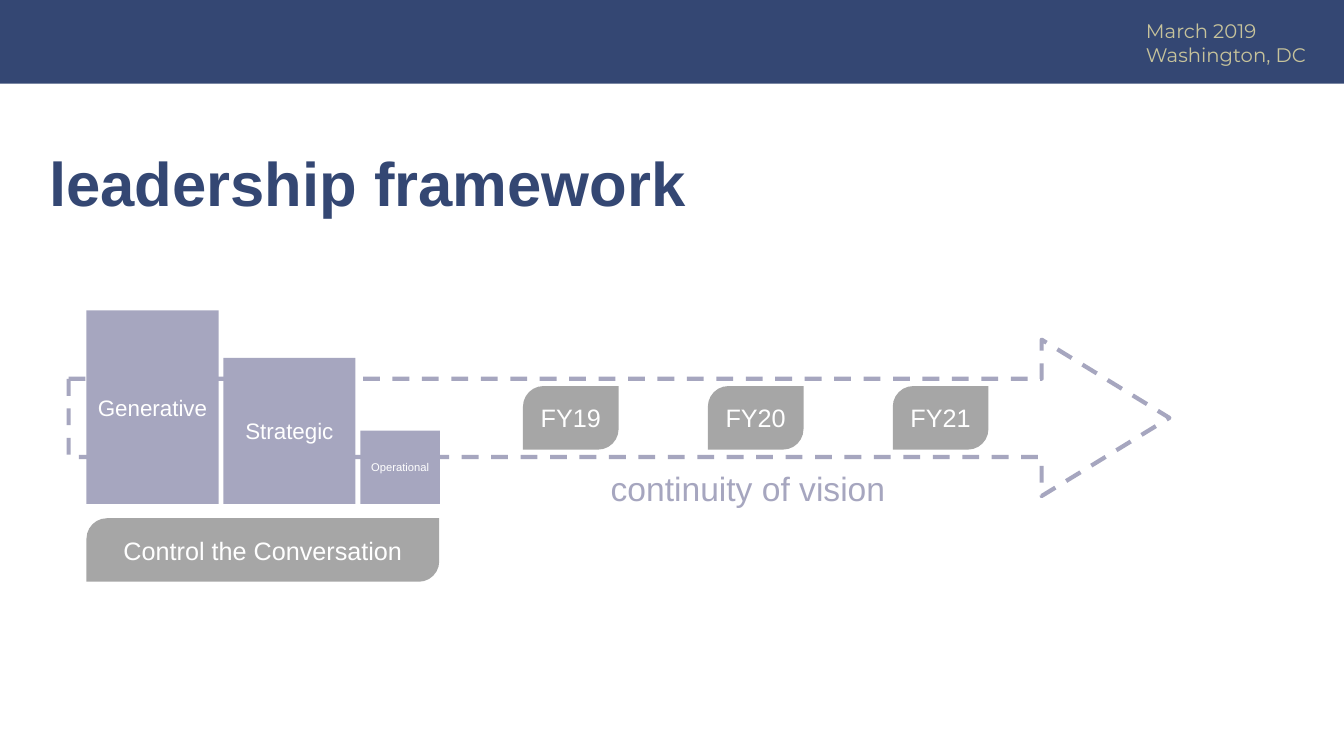
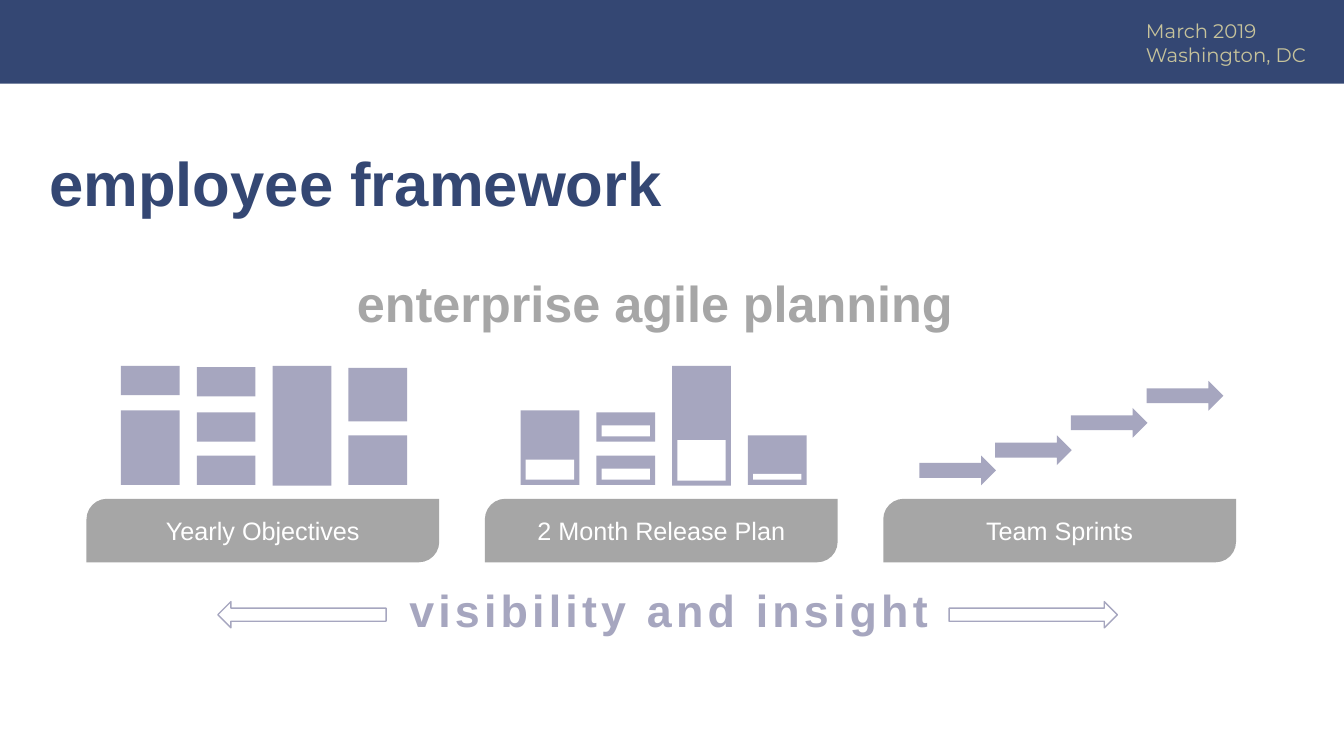
from dataclasses import dataclass

from pptx import Presentation
from pptx.dml.color import RGBColor
from pptx.enum.dml import MSO_LINE
from pptx.enum.shapes import MSO_SHAPE
from pptx.enum.text import MSO_ANCHOR, MSO_AUTO_SIZE, PP_ALIGN
from pptx.util import Cm, Pt

RECT = MSO_SHAPE.RECTANGLE
TAB = MSO_SHAPE.ROUND_2_DIAG_RECTANGLE
RIGHT, LEFT = MSO_SHAPE.RIGHT_ARROW, MSO_SHAPE.LEFT_ARROW
DASH = MSO_LINE.DASH
MIDDLE, TOP = MSO_ANCHOR.MIDDLE, MSO_ANCHOR.TOP
CENTER, START = PP_ALIGN.CENTER, PP_ALIGN.LEFT
FIXED = MSO_AUTO_SIZE.NONE

NAVY, SAND, GRAY, LILAC, WHITE = "344773", "C7C39B", "A6A6A6", "A6A6BF", "FFFFFF"
BODY, SIDE = "Arial", "Montserrat"
MARGIN = 2.18  # left edge of the diagrams
TAB_W, TAB_H = 8.89, 1.6


@dataclass(frozen=True)
class Box:
    """Place and size in centimetres."""
    x: float
    y: float
    w: float
    h: float


@dataclass(frozen=True)
class Style:
    size: float
    color: str = WHITE
    bold: bool = False
    face: str = BODY
    align: PP_ALIGN = CENTER
    lead: float = 1.0
    track: int = 0  # letter spacing in hundredths of a point


@dataclass(frozen=True)
class Tile:
    """A block in a column; gap is the height of its white window."""
    col: int
    y: float
    h: float
    gap: float = 0


HEAD = Style(44, NAVY, True, align=START, lead=0.9)
DATE = Style(14, SAND, face=SIDE, align=START)
LABEL = Style(18)


def rgb(code: str) -> RGBColor:
    return RGBColor.from_string(code)


def write(frame, text: str, style: Style, anchor=MIDDLE) -> None:
    frame.word_wrap = True
    frame.auto_size = FIXED
    frame.vertical_anchor = anchor
    frame.text = text
    for para in frame.paragraphs:
        para.alignment = style.align
        para.line_spacing = style.lead
        font = para.font
        font.name, font.size, font.bold = style.face, Pt(style.size), style.bold
        font.color.rgb = rgb(style.color)
        if style.track:
            for run in para.runs:
                run._r.get_or_add_rPr().set("spc", str(style.track))


def place(box: Box) -> tuple:
    return Cm(box.x), Cm(box.y), Cm(box.w), Cm(box.h)


def note(slide, box: Box, text: str, style: Style, anchor=MIDDLE) -> None:
    write(slide.shapes.add_textbox(*place(box)).text_frame, text, style, anchor)


def draw(slide, kind, box: Box, fill: str, text: str = "", style: Style = LABEL):
    shape = slide.shapes.add_shape(kind, *place(box))
    shape.shadow.inherit = False
    shape.fill.solid()
    shape.fill.fore_color.rgb = rgb(fill)
    shape.line.fill.background()
    if text:
        frame = shape.text_frame
        frame.margin_left = frame.margin_right = 0
        write(frame, text, style)
    return shape


def edge(shape, width: float) -> None:
    shape.line.color.rgb = rgb(LILAC)
    shape.line.width = Pt(width)


def label(slide, x: float, y: float, text: str, w: float = TAB_W) -> None:
    shape = draw(slide, TAB, Box(x, y, w, TAB_H), GRAY, text)
    shape.adjustments[0] = 0.323
    shape.adjustments[1] = 0


def start(deck, title: str, width: float):
    """Add a slide with the shared band, date and title."""
    slide = deck.slides.add_slide(deck.slide_layouts[5])
    draw(slide, RECT, Box(0, 0, 33.87, 2.11), NAVY)
    note(slide, Box(28.63, 0.36, 5.24, 1.45), "March 2019\nWashington, DC", DATE, TOP)
    head = slide.shapes.title
    head.left, head.top, head.width, head.height = place(Box(0.99, 2.87, width, 3.68))
    write(head.text_frame, title, HEAD)
    return slide


def chart(slide, left: float, tiles: list[Tile]) -> None:
    """Draw tiles in columns, each with its white window if any."""
    wide, pitch, rim = 1.48, 1.91, 0.13
    for tile in tiles:
        x = left + tile.col * pitch
        draw(slide, RECT, Box(x, tile.y, wide, tile.h), LILAC)
        if tile.gap:
            y = tile.y + tile.h - rim - tile.gap
            draw(slide, RECT, Box(x + rim, y, wide - 2 * rim, tile.gap), WHITE)


def leader(deck) -> None:
    slide = start(deck, "leadership framework", 29.21)
    label(slide, MARGIN, 13.06, "Control the Conversation")

    # Dashed arrow behind the blocks
    arrow = draw(slide, RIGHT, Box(1.73, 8.56, 27.74, 3.94), WHITE)
    arrow.adjustments[0], arrow.adjustments[1] = 0.5, 0.817
    edge(arrow, 3)
    arrow.line.dash_style = DASH

    # Blocks on a common base
    base, x = 12.7, MARGIN
    for text, w, h, size in (("Generative", 3.33, 4.88, 16),
                             ("Strategic", 3.33, 3.68, 16),
                             ("Operational", 2.01, 1.85, 8)):
        draw(slide, RECT, Box(x, base - h, w, h), LILAC, text, Style(size))
        x += w + 0.12

    # Years
    for i, year in enumerate(("FY19", "FY20", "FY21")):
        label(slide, 13.18 + i * 4.66, 9.73, year, 2.41)
    note(slide, Box(15.14, 11.66, 7.82, 1.42), "continuity of vision",
         Style(24, LILAC, align=START, lead=0.9))


def staff(deck) -> None:
    slide = start(deck, "employee framework", 31.8)
    note(slide, Box(2.44, 6.38, 28.14, 2.69), "enterprise agile planning",
         Style(36, GRAY, True, lead=0.9))
    for i, text in enumerate(("Yearly Objectives", "2 Month Release Plan", "Team Sprints")):
        label(slide, MARGIN + i * 10.04, 12.57, text)

    # Objectives and release plan
    chart(slide, 3.05, [
        Tile(0, 9.22, 0.74), Tile(0, 10.34, 1.88),
        Tile(1, 9.25, 0.74), Tile(1, 10.39, 0.74), Tile(1, 11.48, 0.74),
        Tile(2, 9.22, 3.02),
        Tile(3, 9.27, 1.35), Tile(3, 10.97, 1.25)])
    chart(slide, 13.12, [
        Tile(0, 10.34, 1.88, 0.51),
        Tile(1, 10.39, 0.74, 0.28), Tile(1, 11.48, 0.74, 0.28),
        Tile(2, 9.22, 3.02, 1.02),
        Tile(3, 10.97, 1.25, 0.15)])

    # Sprints
    for i, y in enumerate((11.48, 10.97, 10.28, 9.6)):
        draw(slide, RIGHT, Box(23.17 + i * 1.91, y, 1.93, 0.75), LILAC)

    # Closing line between two arrows
    note(slide, Box(2.79, 14.53, 28.14, 1.83), "visibility and insight",
         Style(32, LILAC, True, lead=0.9, track=300))
    for kind, x in ((LEFT, 5.49), (RIGHT, 23.92)):
        edge(draw(slide, kind, Box(x, 15.16, 4.24, 0.66), WHITE), 1)


def main() -> None:
    deck = Presentation()
    deck.slide_width, deck.slide_height = Cm(33.87), Cm(19.05)
    leader(deck)
    staff(deck)
    deck.save("out.pptx")


if __name__ == "__main__":
    main()
